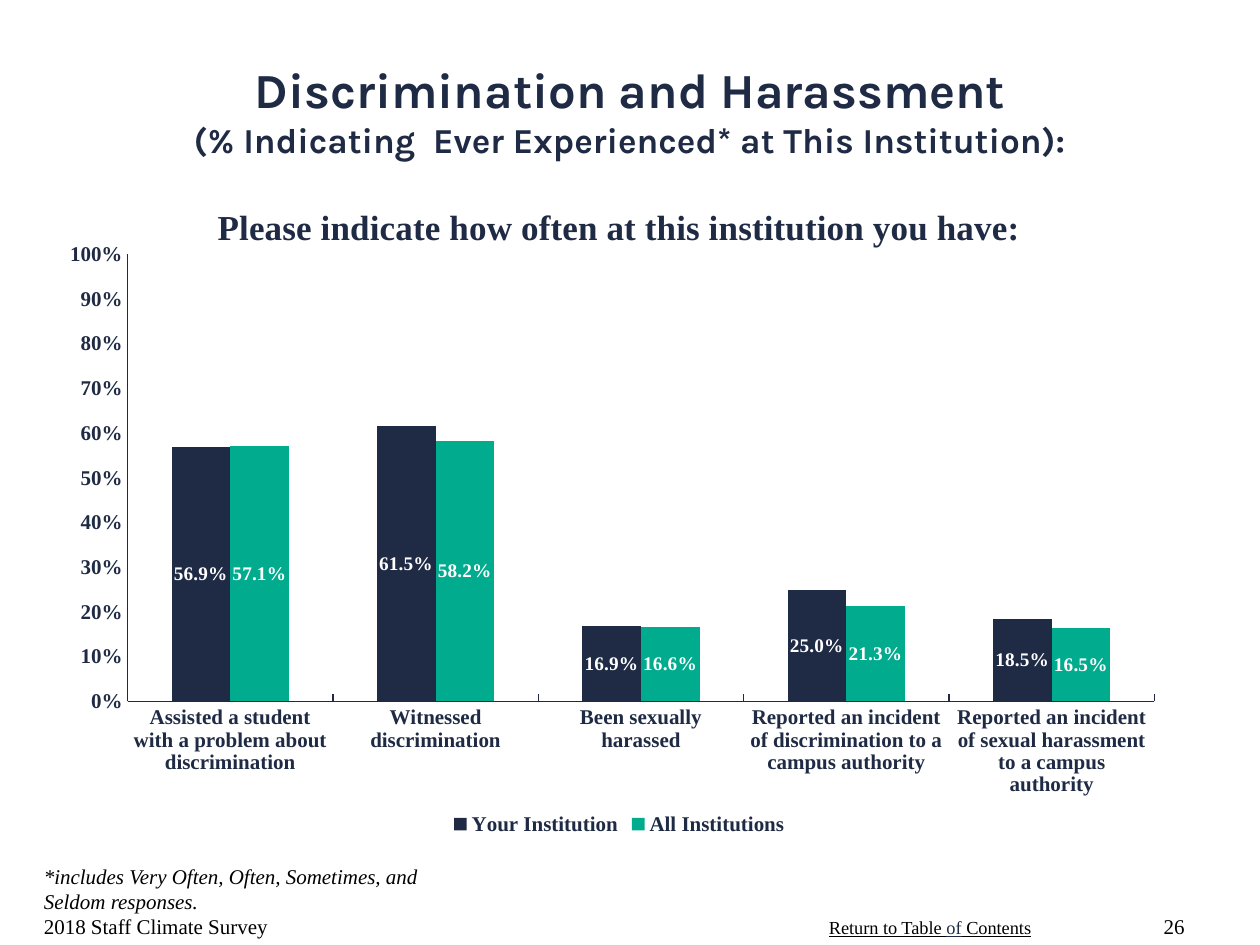
from dataclasses import dataclass

import pptx
import pptx.chart.data
import pptx.dml.color
import pptx.enum.chart
import pptx.enum.text
import pptx.oxml
import pptx.oxml.ns
import pptx.util
from pptx.util import Inches

ALIGN = pptx.enum.text.PP_ALIGN
ANCHOR = pptx.enum.text.MSO_ANCHOR
XL = pptx.enum.chart


@dataclass(frozen=True)
class Theme:
    navy: str = "1F2A44"
    green: str = "00AB8E"
    black: str = "000000"
    white: str = "FFFFFF"
    heading: str = "Karla"
    body: str = "Times New Roman"
    title: float = 28
    subtitle: float = 20
    text: float = 12
    label: float = 11
    link: float = 10.5


THEME = Theme()


@dataclass(frozen=True)
class Run:
    text: str
    size: float = THEME.text
    color: str = THEME.black
    face: str = THEME.body
    bold: bool = False
    italic: bool = False
    underline: bool = False
    break_before: bool = False


@dataclass(frozen=True)
class TextBox:
    box: tuple[float, float, float, float]
    paragraphs: list[list[Run]]
    align: ALIGN = ALIGN.LEFT
    anchor: ANCHOR = ANCHOR.BOTTOM
    wrap: bool = True


@dataclass(frozen=True)
class Series:
    name: str
    values: tuple[float, ...]
    color: str


# Slide content
TEXTS = [
    TextBox((0, 0.25, 10, 1.25), [[
        Run("Discrimination and Harassment", THEME.title, THEME.navy,
            THEME.heading, bold=True),
        Run("(% Indicating  Ever Experienced* at This Institution):",
            THEME.subtitle, THEME.navy, THEME.heading, bold=True,
            break_before=True),
    ]], ALIGN.CENTER, ANCHOR.MIDDLE),
    TextBox((0.25, 7, 3.17, 0.5), [
        [Run("*includes Very Often, Often, Sometimes, and Seldom responses.",
             italic=True)],
        [Run("2018 Staff Climate Survey")],
    ]),
    TextBox((6.48, 7.22, 1.82, 0.28), [[
        Run("Return to Table ", THEME.link, underline=True),
        Run("of", THEME.link, THEME.navy, underline=True),
        Run(" Contents", THEME.link, underline=True),
    ]], anchor=ANCHOR.TOP, wrap=False),
    TextBox((9, 7, 0.5, 0.5), [[Run("26")]], ALIGN.RIGHT),
]
CHART_BOX = (0.5, 1.42, 8.83, 5.25)
CHART_TITLE = "Please indicate how often at this institution you have:"
PLOT_AREA = {"x": 0.058, "y": 0.114, "w": 0.923, "h": 0.676}
CATEGORIES = [
    "Assisted a student with a problem about discrimination",
    "Witnessed discrimination",
    "Been sexually harassed",
    "Reported an incident of discrimination to a campus authority",
    "Reported an incident of sexual harassment to a campus authority",
]
SERIES = [
    Series("Your Institution", (0.569, 0.615, 0.169, 0.25, 0.185), THEME.navy),
    Series("All Institutions", (0.571, 0.582, 0.166, 0.213, 0.165), THEME.green),
]


def rgb(color: str) -> pptx.dml.color.RGBColor:
    return pptx.dml.color.RGBColor.from_string(color)


def style_font(font, size: float, color: str, face: str = THEME.body,
               bold: bool = True) -> None:
    font.size = pptx.util.Pt(size)
    font.name = face
    font.bold = bold
    font.color.rgb = rgb(color)


def add_text(s, item: TextBox) -> None:
    tf = s.shapes.add_textbox(*map(Inches, item.box)).text_frame
    tf.word_wrap = item.wrap
    tf.vertical_anchor = item.anchor
    for i, runs in enumerate(item.paragraphs):
        p = tf.add_paragraph() if i else tf.paragraphs[0]
        p.alignment = item.align
        for run in runs:
            if run.break_before:
                p.add_line_break()
            r = p.add_run()
            r.text = run.text
            style_font(r.font, run.size, run.color, run.face, run.bold)
            r.font.italic = run.italic
            r.font.underline = run.underline


def style_axis(axis, tick: XL.XL_TICK_MARK) -> None:
    axis.has_major_gridlines = False
    axis.major_tick_mark = tick
    axis.minor_tick_mark = XL.XL_TICK_MARK.NONE
    axis.format.line.color.rgb = rgb(THEME.navy)
    axis.format.line.width = pptx.util.Pt(0.75)
    style_font(axis.tick_labels.font, THEME.text, THEME.navy)


def place_plot(chart) -> None:
    """Fix the inner plot area as fractions of the chart."""
    area = chart.plots[0]._element.getparent()
    for old in area.findall(pptx.oxml.ns.qn("c:layout")):
        area.remove(old)
    modes = "".join(f'<c:{k}Mode val="edge"/>' for k in "xy")
    sizes = "".join(f'<c:{k} val="{v}"/>' for k, v in PLOT_AREA.items())
    area.insert(0, pptx.oxml.parse_xml(
        f'<c:layout {pptx.oxml.ns.nsdecls("c")}><c:manualLayout>'
        f'<c:layoutTarget val="inner"/>{modes}{sizes}'
        '</c:manualLayout></c:layout>'))


def add_column_chart(s) -> None:
    data = pptx.chart.data.CategoryChartData(number_format="0.0%")
    data.categories = CATEGORIES
    for item in SERIES:
        data.add_series(item.name, item.values)
    chart = s.shapes.add_chart(XL.XL_CHART_TYPE.COLUMN_CLUSTERED,
                               *map(Inches, CHART_BOX), data).chart
    style_font(chart.font, THEME.text, THEME.navy)

    # Title and legend
    chart.has_title = True
    r = chart.chart_title.text_frame.paragraphs[0].add_run()
    r.text = CHART_TITLE
    style_font(r.font, THEME.subtitle, THEME.navy)
    chart.has_legend = True
    chart.legend.position = XL.XL_LEGEND_POSITION.BOTTOM
    chart.legend.include_in_layout = False
    style_font(chart.legend.font, THEME.text, THEME.navy)

    # Axes
    style_axis(chart.category_axis, XL.XL_TICK_MARK.INSIDE)
    axis = chart.value_axis
    style_axis(axis, XL.XL_TICK_MARK.NONE)
    axis.minimum_scale, axis.maximum_scale, axis.major_unit = 0, 1, 0.1
    axis.tick_labels.number_format = "0%"
    axis.tick_labels.number_format_is_linked = False

    # Columns and their labels
    plot = chart.plots[0]
    plot.gap_width = 150
    plot.overlap = 0
    plot.vary_by_categories = False
    for series, item in zip(plot.series, SERIES):
        series.format.fill.solid()
        series.format.fill.fore_color.rgb = rgb(item.color)
        labels = series.data_labels
        labels.show_value = True
        labels.position = XL.XL_LABEL_POSITION.CENTER
        labels.number_format = "0.0%"
        labels.number_format_is_linked = False
        style_font(labels.font, THEME.label, THEME.white)
    place_plot(chart)


def main() -> None:
    prs = pptx.Presentation()
    prs.slide_width, prs.slide_height = Inches(10), Inches(7.5)
    s = prs.slides.add_slide(prs.slide_layouts[6])
    add_column_chart(s)
    for item in TEXTS:
        add_text(s, item)
    prs.save("out.pptx")


if __name__ == "__main__":
    main()
